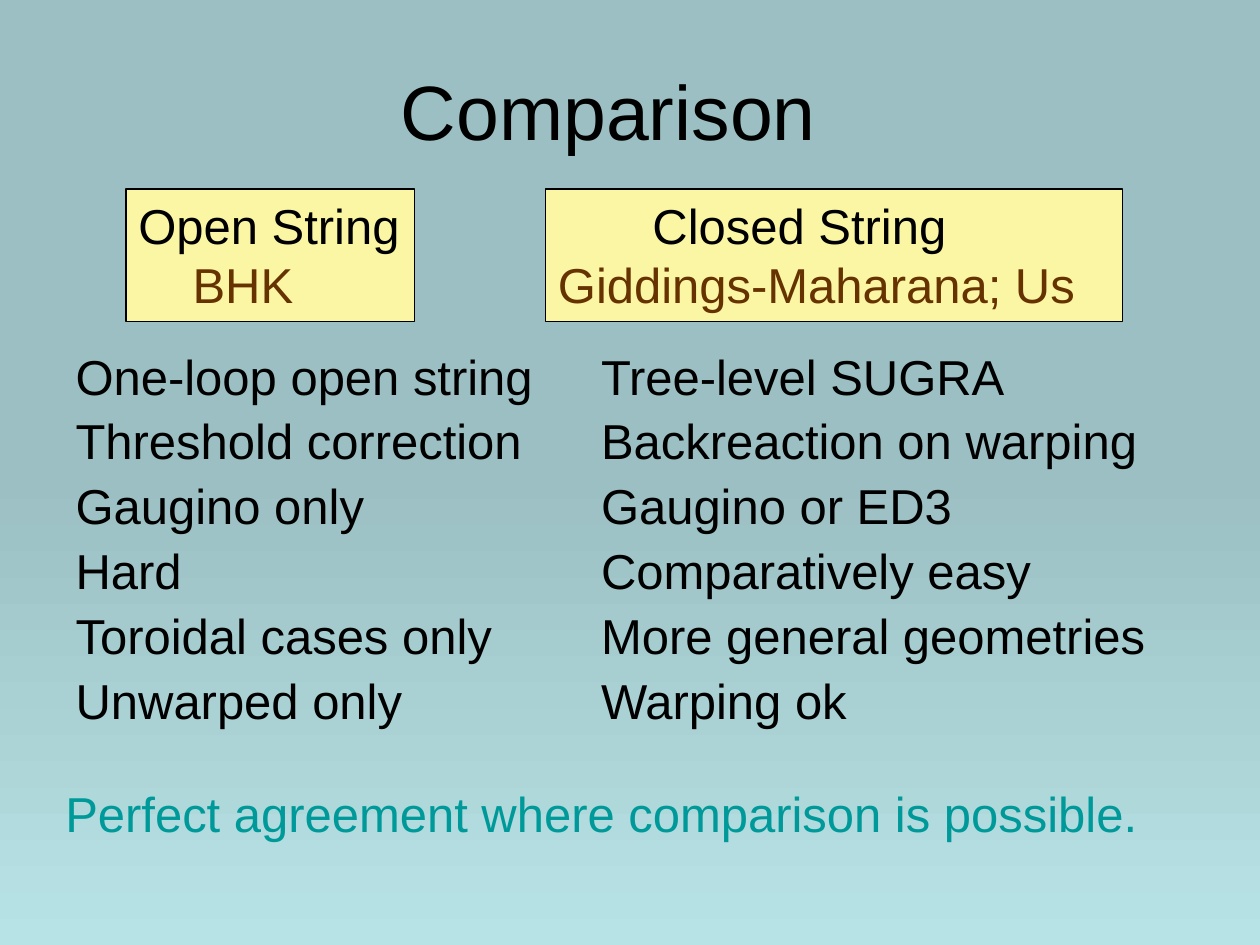
from pptx import Presentation
from pptx.dml.color import RGBColor
from pptx.enum.shapes import MSO_SHAPE as Shape
from pptx.enum.text import MSO_ANCHOR as Anchor, MSO_AUTO_SIZE as AutoSize, PP_ALIGN as Align
from pptx.oxml.ns import qn
from pptx.util import Inches, Pt
from lxml.etree import SubElement

BLACK = RGBColor(0x00, 0x00, 0x00)
BROWN = RGBColor(0x66, 0x33, 0x00)
TEAL = RGBColor(0x00, 0x99, 0x99)
YELLOW = RGBColor(0xFA, 0xF6, 0xA4)
SKY_TOP = RGBColor(0x9B, 0xBF, 0xC2)
SKY_BOTTOM = RGBColor(0xB8, 0xE3, 0xE6)

OPEN_POINTS = ["One-loop open string", "Threshold correction", "Gaugino only",
               "Hard", "Toroidal cases only", "Unwarped only"]
CLOSED_POINTS = ["Tree-level SUGRA", "Backreaction on warping", "Gaugino or ED3",
                 "Comparatively easy", "More general geometries", "Warping ok"]


class SlideWriter:
    font = "Arial"
    title_size = Pt(44)
    text_size = Pt(28)

    def __init__(self, page):
        self.page = page

    def background(self, stops):
        fill = self.page.background.fill
        fill.gradient()
        fill.gradient_angle = 270
        for stop, (position, color) in zip(fill.gradient_stops, stops):
            stop.position = position
            stop.color.rgb = color

    def place(self, box, left, top, width, height):
        box.left, box.top = Inches(left), Inches(top)
        box.width, box.height = Inches(width), Inches(height)

    def span(self, para, text, color=BLACK, size=None):
        span = para.add_run()
        span.text = text
        span.font.name = self.font
        span.font.size = size or self.text_size
        span.font.color.rgb = color

    def paragraphs(self, frame, count):
        return [frame.paragraphs[0]] + [frame.add_paragraph() for _ in range(count - 1)]

    def indent(self, para, margin, first=0.0):
        properties = para._p.get_or_add_pPr()
        properties.set("marL", str(Inches(margin)))
        properties.set("indent", str(Inches(first)))
        return properties

    def title(self, text, *area):
        box = self.page.shapes.title
        self.place(box, *area)
        box.text_frame.vertical_anchor = Anchor.MIDDLE
        para = box.text_frame.paragraphs[0]
        para.alignment = Align.CENTER
        self.span(para, text, size=self.title_size)

    def points(self, index, lines, *area):
        box = self.page.placeholders[index]
        self.place(box, *area)
        frame = box.text_frame
        frame.auto_size = AutoSize.NONE
        for para, line in zip(self.paragraphs(frame, len(lines)), lines):
            para.line_spacing = 0.9
            para.space_before = Pt(6.8)
            SubElement(self.indent(para, 0.38, -0.38), qn("a:buNone"))
            self.span(para, line)

    def heading(self, lines, wrap, *area):
        box = self.page.shapes.add_shape(Shape.RECTANGLE, *map(Inches, area))
        box.shadow.inherit = False
        box.fill.solid()
        box.fill.fore_color.rgb = YELLOW
        box.line.color.rgb = BLACK
        box.line.width = Pt(0.75)
        frame = box.text_frame
        frame.word_wrap = wrap
        frame.vertical_anchor = Anchor.TOP
        for para, (text, color, margin) in zip(self.paragraphs(frame, len(lines)), lines):
            para.alignment = Align.LEFT
            self.indent(para, margin)
            self.span(para, text, color)

    def note(self, text, color, *area):
        box = self.page.shapes.add_textbox(*map(Inches, area))
        box.text_frame.word_wrap = True
        self.span(box.text_frame.paragraphs[0], text, color)


def main():
    deck = Presentation()
    deck.slide_width, deck.slide_height = Inches(10), Inches(7.5)
    writer = SlideWriter(deck.slides.add_slide(deck.slide_layouts[3]))
    writer.background([(0.5, SKY_TOP), (1.0, SKY_BOTTOM)])
    writer.title("Comparison", 0.33, 0.33, 9, 1.08)
    writer.points(1, OPEN_POINTS, 0.5, 2.75, 4.17, 3.33)
    writer.points(2, CLOSED_POINTS, 4.67, 2.75, 5.17, 3.42)
    writer.heading([("Closed String", BLACK, 0.75), ("Giddings-Maharana; Us", BROWN, 0)],
                   True, 4.33, 1.5, 4.58, 1.05)
    writer.heading([("Open String", BLACK, 0), ("BHK", BROWN, 0.43)],
                   False, 1, 1.5, 2.29, 1.05)
    writer.note("Perfect agreement where comparison is possible.", TEAL, 0.42, 6.17, 9.08, 0.57)
    deck.save("out.pptx")


if __name__ == "__main__":
    main()
